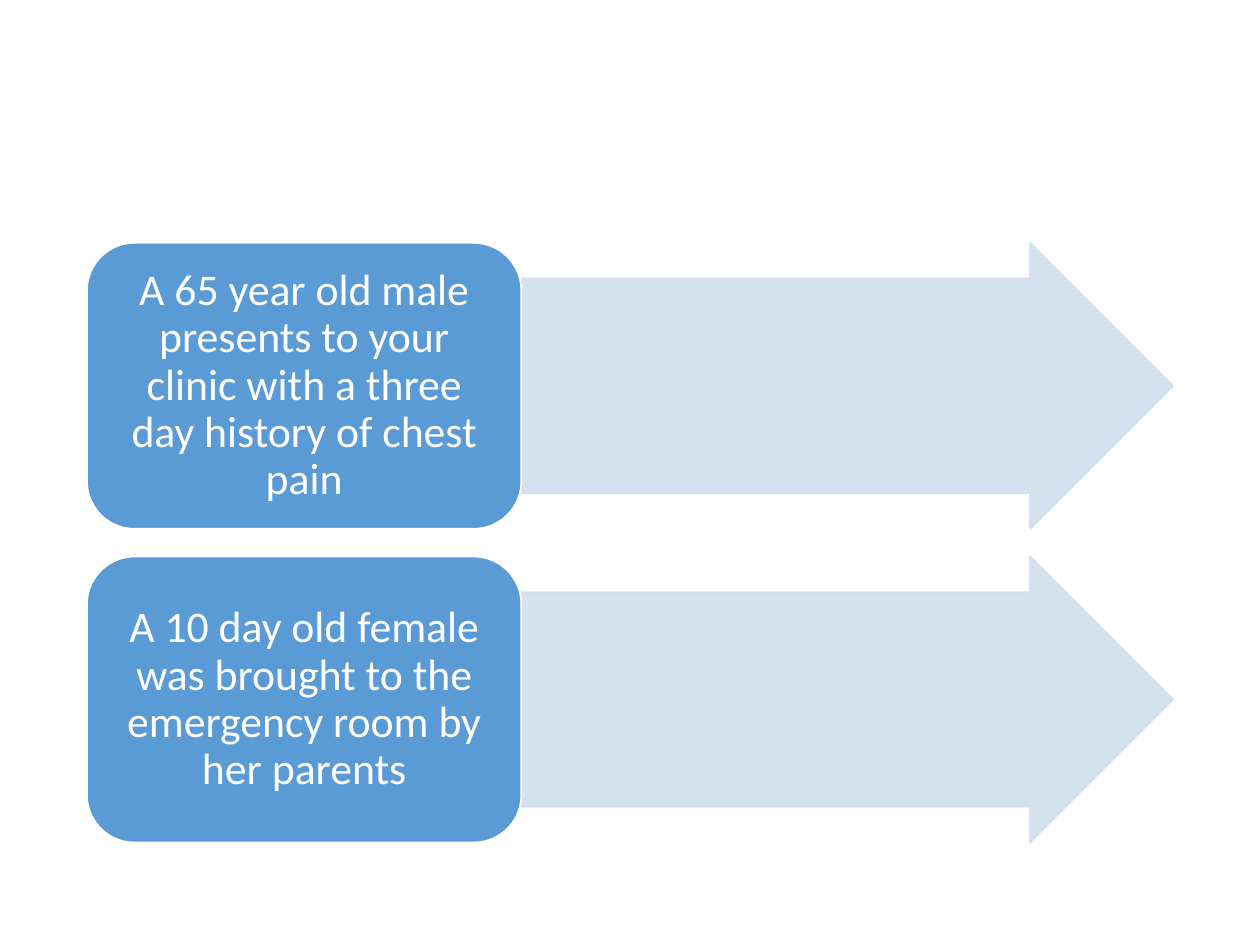
from lxml.etree import SubElement
from pptx import Presentation
from pptx.dml.color import RGBColor as RGB
from pptx.enum.shapes import MSO_SHAPE as SHAPE
from pptx.enum.text import MSO_ANCHOR as ANCHOR, PP_ALIGN as ALIGN
from pptx.oxml.ns import qn
from pptx.util import Inches, Pt

COLORS = {"card": "5B9BD5", "arrow": "D2DEEF", "white": "FFFFFF"}
CASES = [
    "A 65 year old male presents to your clinic with a three day history of chest pain",
    "A 10 day old female was brought to the emergency room by her parents",
]
WIDE, HIGH = 10, 7.5
LEFT, TOP, SPAN = 0.069 * WIDE, 0.257 * HIGH, 0.862 * WIDE
ROW, GAP = 2.27, 0.22
CARD = 0.4  # share of the row taken by the card


def paint(fill, name, alpha=None):
    fill.solid()
    fill.fore_color.rgb = RGB.from_string(COLORS[name])
    if alpha:
        for tone in fill._xPr.iter(qn("a:srgbClr")):
            SubElement(tone, qn("a:alpha"), val=str(alpha * 1000))


def add_block(slide, kind, box, fill, line, alpha=None):
    block = slide.shapes.add_shape(kind, *map(Inches, box))
    block.shadow.inherit = False
    block.line.width = Pt(1)
    paint(block.line.fill, line, alpha)
    paint(block.fill, fill, alpha)
    return block


def set_text(block, text, size=25, color="white", font="Calibri"):
    frame = block.text_frame
    frame.word_wrap = True
    frame.vertical_anchor = ANCHOR.MIDDLE
    para = frame.paragraphs[0]
    para.alignment = ALIGN.CENTER
    para.line_spacing = 0.9
    run = para.add_run()
    run.text = text
    run.font.name = font
    run.font.size = Pt(size)
    run.font.color.rgb = RGB.from_string(COLORS[color])


def add_case(slide, text, left, top, width, height):
    """Place a case card with an arrow leading off its right side."""
    split = width * CARD
    arrow = add_block(slide, SHAPE.RIGHT_ARROW,
                      (left + split, top, width - split, height),
                      "arrow", "arrow", alpha=90)
    arrow.adjustments[0] = 0.75
    arrow.adjustments[1] = 0.5
    card = add_block(slide, SHAPE.ROUNDED_RECTANGLE,
                     (left, top, split, height), "card", "white")
    set_text(card, text)


def main():
    deck = Presentation()
    deck.slide_width, deck.slide_height = Inches(WIDE), Inches(HIGH)
    slide = deck.slides.add_slide(deck.slide_layouts[6])
    for row, text in enumerate(CASES):
        add_case(slide, text, LEFT, TOP + row * (ROW + GAP), SPAN, ROW)
    deck.save("out.pptx")


if __name__ == "__main__":
    main()
